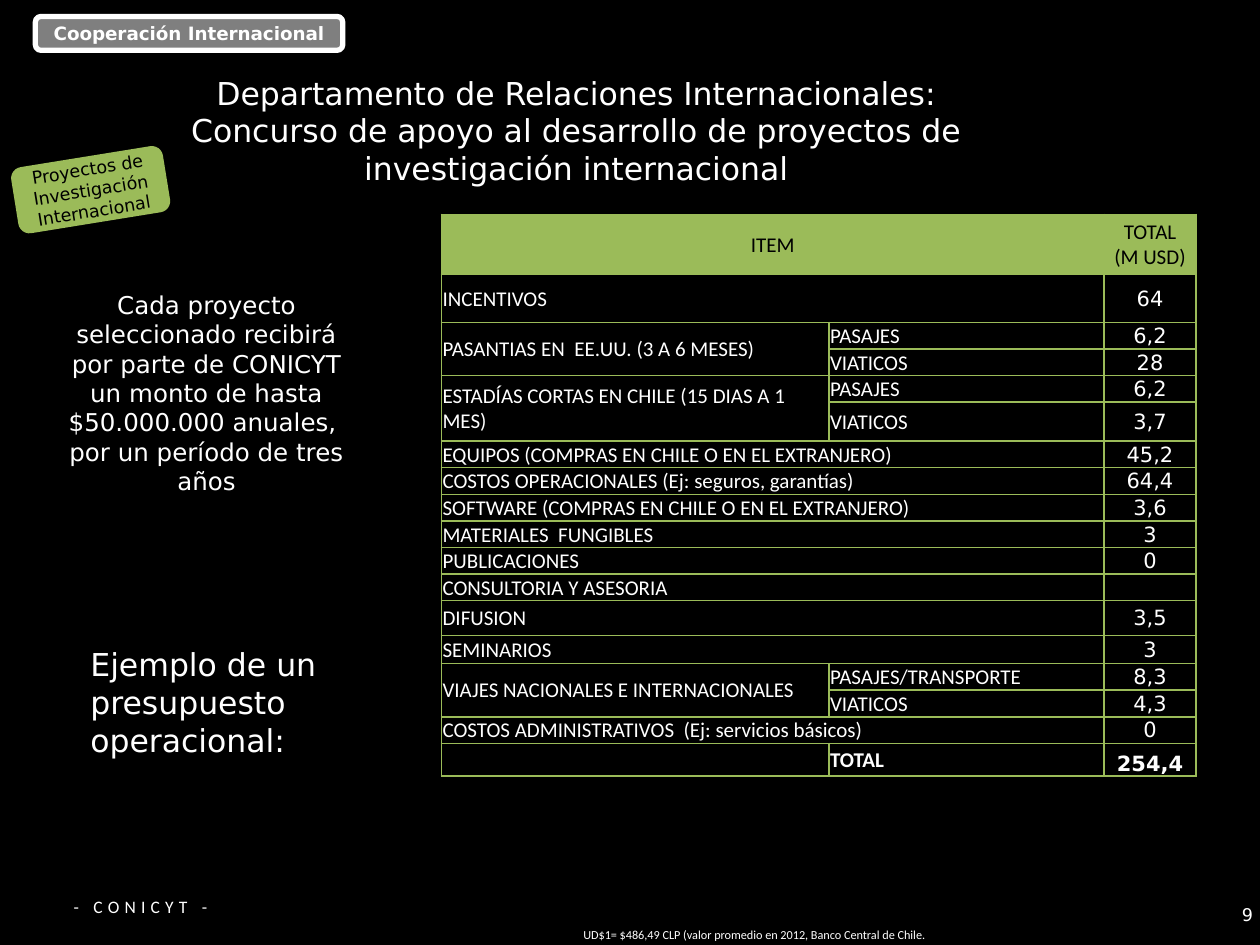
from lxml.etree import SubElement
from pptx import Presentation
from pptx.dml.color import RGBColor
from pptx.enum.shapes import MSO_SHAPE as Form
from pptx.enum.text import MSO_ANCHOR as Anchor, PP_ALIGN as Align
from pptx.oxml import parse_xml
from pptx.oxml.ns import nsdecls, qn
from pptx.util import Pt

SANS, CAL = "DejaVu Sans", "Calibri"
WHITE, BLACK, GREEN, GRAY = "FFFFFF", "000000", "9BBB59", "7F7F7F"

# Height, item, detail, total: no detail spans two columns,
# no item continues the row above
ROWS = [
    (34.3, "ITEM", None, "TOTAL\n(M USD)"),
    (27.4, "INCENTIVOS", None, "64"),
    (15.2, "PASANTIAS EN  EE.UU. (3 A 6 MESES)", "PASAJES", "6,2"),
    (15.2, None, "VIATICOS", "28"),
    (15.2, "ESTADÍAS CORTAS EN CHILE (15 DIAS A 1 MES)", "PASAJES", "6,2"),
    (22.3, None, "VIATICOS", "3,7"),
    (15.2, "EQUIPOS (COMPRAS EN CHILE O EN EL EXTRANJERO)", None, "45,2"),
    (15.2, "COSTOS OPERACIONALES (Ej: seguros, garantías)", None, "64,4"),
    (15.2, "SOFTWARE (COMPRAS EN CHILE O EN EL EXTRANJERO)", None, "3,6"),
    (15.2, "MATERIALES  FUNGIBLES", None, "3"),
    (15.2, "PUBLICACIONES", None, "0"),
    (15.2, "CONSULTORIA Y ASESORIA", None, ""),
    (19.8, "DIFUSION", None, "3,5"),
    (16.2, "SEMINARIOS", None, "3"),
    (15.2, "VIAJES NACIONALES E INTERNACIONALES", "PASAJES/TRANSPORTE", "8,3"),
    (15.2, None, "VIATICOS", "4,3"),
    (15.2, "COSTOS ADMINISTRATIVOS  (Ej: servicios básicos)", None, "0"),
    (18.8, "", "TOTAL", "254,4"),
]
COLS = [221.4, 157.4, 52.4]


def rgb(code):
    return RGBColor.from_string(code)


def put(frame, text, size=12, font=SANS, color=WHITE, bold=False,
        align=Align.LEFT, space=0, indent=0):
    for i, line in enumerate(text.split("\n")):
        para = frame.paragraphs[0] if i == 0 else frame.add_paragraph()
        para.alignment = align
        if indent:
            para._p.get_or_add_pPr().set("marL", str(Pt(indent)))
        if not line:
            SubElement(para._p, qn("a:endParaRPr"), sz=str(size * 100))
            continue
        para.text = line
        for run in para.runs:
            look = run.font
            look.size, look.name, look.bold = Pt(size), font, bold
            look.color.rgb = rgb(color)
            if space:
                run._r.get_or_add_rPr().set("spc", str(space * 100))


def title(slide, box, text):
    shape = slide.shapes.title
    shape.left, shape.top, shape.width, shape.height = map(Pt, box)
    shape.text_frame.vertical_anchor = Anchor.MIDDLE
    put(shape.text_frame, text, size=18, align=Align.CENTER)


def note(slide, box, text, anchor=Anchor.TOP, **look):
    frame = slide.shapes.add_textbox(*map(Pt, box)).text_frame
    frame.word_wrap = True
    frame.vertical_anchor = anchor
    put(frame, text, **look)


def badge(slide, box, text, fill, edge=None, turn=0, **look):
    shape = slide.shapes.add_shape(Form.ROUNDED_RECTANGLE, *map(Pt, box))
    shape.shadow.inherit = False
    shape.rotation = turn
    shape.fill.solid()
    shape.fill.fore_color.rgb = rgb(fill)
    if edge:
        shape.line.color.rgb = rgb(edge)
        shape.line.width = Pt(3)
    else:
        shape.line.fill.background()
    shape.text_frame.word_wrap = True
    shape.text_frame.vertical_anchor = Anchor.MIDDLE
    put(shape.text_frame, text, align=Align.CENTER, **look)


def border(cell, color, width=1):
    props = cell._tc.get_or_add_tcPr()
    for i, side in enumerate("LRTB"):
        props.insert(i, parse_xml(
            f'<a:ln{side} {nsdecls("a")} w="{Pt(width)}"><a:solidFill>'
            f'<a:srgbClr val="{color}"/></a:solidFill></a:ln{side}>'))


def budget(slide, left, top):
    high = sum(row[0] for row in ROWS)
    box = left, top, sum(COLS), high
    table = slide.shapes.add_table(
        len(ROWS), len(COLS), *map(Pt, box)).table
    table.first_row = table.horz_banding = False
    for col, width in zip(table.columns, COLS):
        col.width = Pt(width)
    last = len(ROWS) - 1
    for r, (height, *texts) in enumerate(ROWS):
        table.rows[r].height = Pt(height)
        for c, text in enumerate(texts):
            cell = table.cell(r, c)
            cell.margin_left = cell.margin_right = cell.margin_top = Pt(0.72)
            cell.margin_bottom = 0
            low = r == last and c == 2
            cell.vertical_anchor = Anchor.BOTTOM if low else Anchor.MIDDLE
            if r == 0:
                cell.fill.solid()
                cell.fill.fore_color.rgb = rgb(GREEN)
            else:
                cell.fill.background()
            border(cell, GREEN)
            put(cell.text_frame, text or "",
                font=SANS if c == 2 and r else CAL,
                color=WHITE if r else BLACK, bold=r == last,
                align=Align.CENTER if c == 2 or r == 0 else Align.LEFT)
        # Spans
        if texts[1] is None:
            table.cell(r, 0).merge(table.cell(r, 1))
        if texts[0] is None:
            table.cell(r - 1, 0).merge(table.cell(r, 0))


def main():
    deck = Presentation()
    deck.slide_width, deck.slide_height = Pt(720), Pt(540)
    slide = deck.slides.add_slide(deck.slide_layouts[5])
    slide.background.fill.solid()
    slide.background.fill.fore_color.rgb = rgb(BLACK)

    # Footer and page number
    note(slide, (-8.6, 508.3, 141.8, 23.8), "- CONICYT -", size=10, font=CAL,
         align=Align.CENTER, space=3, indent=36)
    note(slide, (555, 508.3, 168, 28.8), "9", size=10, align=Align.RIGHT,
         anchor=Anchor.MIDDLE)

    # Budget table
    budget(slide, 252.2, 122.5)

    # Side notes and exchange rate
    note(slide, (30.2, 162, 175.7, 126),
         "Cada proyecto seleccionado recibirá por parte de CONICYT un monto "
         "de hasta $50.000.000 anuales,  por un período de tres años",
         size=14, align=Align.CENTER)
    note(slide, (44.6, 365, 151.2, 72.7),
         "Ejemplo de un presupuesto operacional:", size=18)
    note(slide, (326.2, 526.3, 226.8, 15.8),
         "UD$1= $486,49 CLP (valor promedio en 2012, Banco Central de Chile.",
         size=7, font=CAL)

    # Badges
    badge(slide, (7.9, 89.3, 87.8, 38.2),
          "Proyectos de Investigación Internacional", GREEN, turn=350.8,
          size=10, color=BLACK)
    badge(slide, (20.2, 9.4, 175.7, 19.4), "Cooperación Internacional", GRAY,
          edge=WHITE, size=10.5, bold=True)

    # Title
    title(slide, (48.2, 43.2, 562.3, 62.6),
          "Departamento de Relaciones Internacionales:\vConcurso de apoyo al "
          "desarrollo de proyectos de investigación internacional")
    deck.save("out.pptx")


if __name__ == "__main__":
    main()
